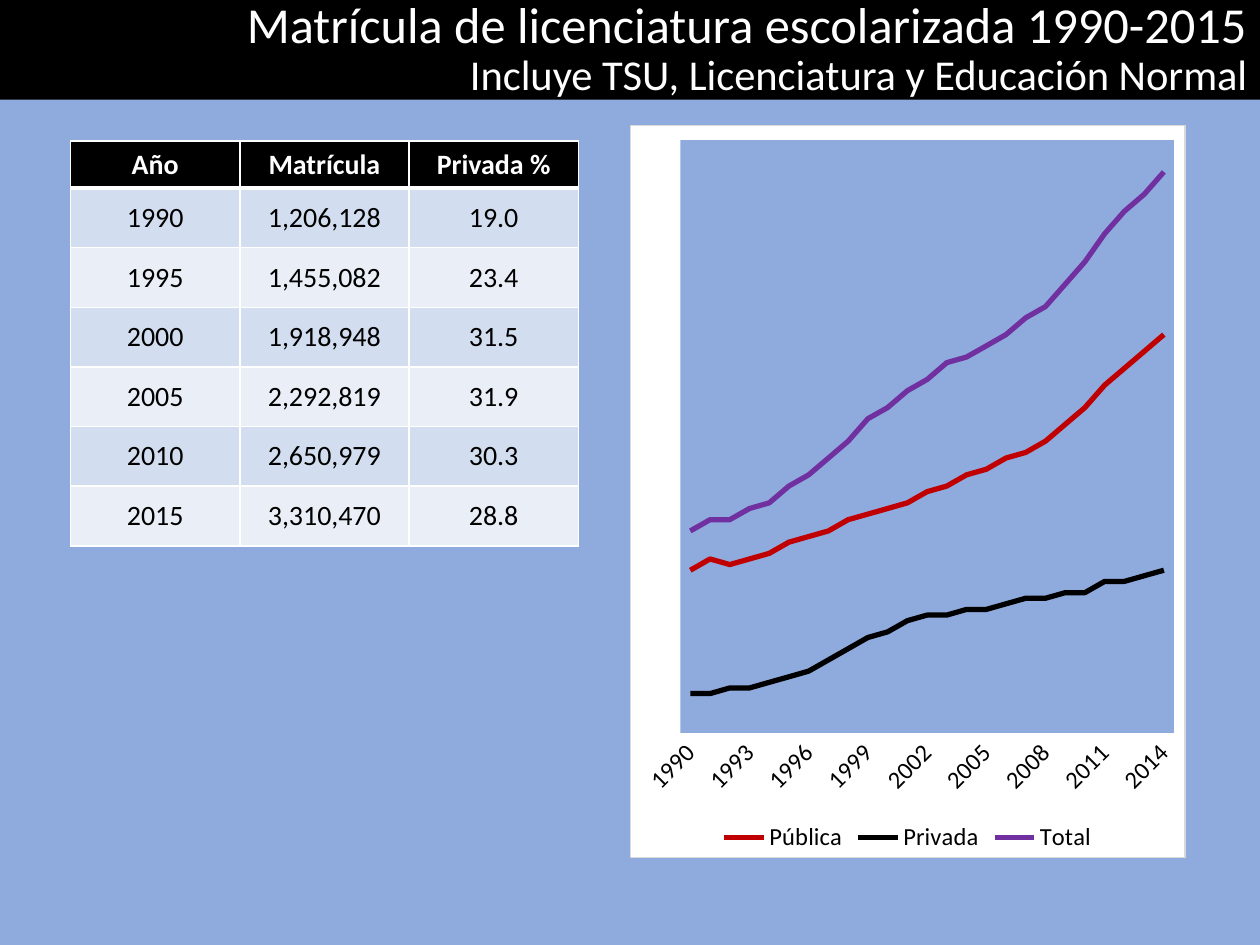
from lxml.etree import SubElement
from pptx import Presentation
from pptx.chart.data import CategoryChartData
from pptx.dml.color import RGBColor
from pptx.enum.chart import XL_CHART_TYPE, XL_LEGEND_POSITION, XL_TICK_MARK
from pptx.enum.shapes import MSO_SHAPE
from pptx.enum.text import MSO_ANCHOR, PP_ALIGN
from pptx.oxml import parse_xml
from pptx.oxml.ns import nsdecls, qn
from pptx.util import Inches, Pt

BLACK = RGBColor(0x00, 0x00, 0x00)
WHITE = RGBColor(0xFF, 0xFF, 0xFF)
BLUE = RGBColor(0x8F, 0xAA, 0xDC)
BANDS = [RGBColor(0xD2, 0xDE, 0xEF), RGBColor(0xEA, 0xEF, 0xF7)]
GREY = RGBColor(0xD9, 0xD9, 0xD9)
RED = RGBColor(0xC0, 0x00, 0x00)
PURPLE = RGBColor(0x70, 0x30, 0xA0)
FONT = "Calibri"

TITLE = [("Matrícula de licenciatura escolarizada 1990-2015", 28.8),
         ("Incluye TSU, Licenciatura y Educación Normal", 24.3)]
ROWS = [("Año", "Matrícula", "Privada %"),
        ("1990", "1,206,128", "19.0"),
        ("1995", "1,455,082", "23.4"),
        ("2000", "1,918,948", "31.5"),
        ("2005", "2,292,819", "31.9"),
        ("2010", "2,650,979", "30.3"),
        ("2015", "3,310,470", "28.8")]
SERIES = [
    ("Pública", RED, [29, 31, 30, 31, 32, 34, 35, 36, 38, 39, 40, 41, 43,
                      44, 46, 47, 49, 50, 52, 55, 58, 62, 65, 68, 71]),
    ("Privada", BLACK, [7, 7, 8, 8, 9, 10, 11, 13, 15, 17, 18, 20, 21,
                        21, 22, 22, 23, 24, 24, 25, 25, 27, 27, 28, 29]),
    ("Total", PURPLE, [36, 38, 38, 40, 41, 44, 46, 49, 52, 56, 58, 61, 63,
                       66, 67, 69, 71, 74, 76, 80, 84, 89, 93, 96, 100]),
]


def style(font, size, color, bold=False):
    for key, val in {"name": FONT, "size": Pt(size), "bold": bold}.items():
        setattr(font, key, val)
    font.color.rgb = color


def add_title(slide, box):
    bar = slide.shapes.add_shape(MSO_SHAPE.RECTANGLE, *box)
    bar.shadow.inherit = False
    bar.fill.solid()
    bar.fill.fore_color.rgb = BLACK
    bar.line.fill.background()
    frame = bar.text_frame
    frame.word_wrap = True
    frame.vertical_anchor = MSO_ANCHOR.MIDDLE
    frame.margin_top = frame.margin_bottom = 0
    para = frame.paragraphs[0]
    para.alignment = PP_ALIGN.RIGHT
    para.line_spacing = 0.9
    for i, (text, size) in enumerate(TITLE):
        if i:
            para.add_line_break()
        run = para.add_run()
        run.text = text
        style(run.font, size, WHITE)


def set_borders(cell, widths):
    """Draw white edges; widths are points for left, right, top, bottom."""
    props = cell._tc.get_or_add_tcPr()
    for i, (side, width) in enumerate(zip("LRTB", widths)):
        props.insert(i, parse_xml(
            f'<a:ln{side} {nsdecls("a")} w="{Pt(width)}"><a:solidFill>'
            f'<a:srgbClr val="{WHITE}"/></a:solidFill></a:ln{side}>'))


def add_grid(slide, box):
    left, top, width, height = box
    table = slide.shapes.add_table(len(ROWS), len(ROWS[0]), *box).table
    table.horz_banding = False
    head = Inches(0.37)
    for col in table.columns:
        col.width = width // len(ROWS[0])
    for r, texts in enumerate(ROWS):
        table.rows[r].height = head if r == 0 else (height - head) // (len(ROWS) - 1)
        for c, text in enumerate(texts):
            cell = table.cell(r, c)
            cell.fill.solid()
            cell.fill.fore_color.rgb = BANDS[(r - 1) % 2] if r else BLACK
            cell.vertical_anchor = MSO_ANCHOR.MIDDLE
            para = cell.text_frame.paragraphs[0]
            para.alignment = PP_ALIGN.CENTER
            run = para.add_run()
            run.text = text
            style(run.font, 16, BLACK if r else WHITE, bold=r == 0)
            set_borders(cell, (1, 1, 3 if r == 1 else 1, 3 if r == 0 else 1))


def area(fill, line=None):
    """Make the format of a chart region from its fill and edge colours."""
    edge = (f'<a:solidFill><a:srgbClr val="{line}"/></a:solidFill>'
            if line else "<a:noFill/>")
    return parse_xml(
        f'<c:spPr {nsdecls("c", "a")}><a:solidFill><a:srgbClr val="{fill}"/>'
        f'</a:solidFill><a:ln w="{Pt(0.75)}">{edge}</a:ln></c:spPr>')


def place_plot(plot, spots):
    """Fix the inner plot area; spots are shares of the chart's size."""
    old = plot.find(qn("c:layout"))
    if old is not None:
        plot.remove(old)
    layout = parse_xml(f'<c:layout {nsdecls("c")}><c:manualLayout/></c:layout>')
    tags = {"layoutTarget": "inner", "xMode": "edge", "yMode": "edge", **spots}
    for tag, val in tags.items():
        SubElement(layout[0], qn(f"c:{tag}")).set("val", str(val))
    plot.insert(0, layout)


def add_lines(slide, box):
    data = CategoryChartData(number_format="#,##0")
    data.categories = [str(year) for year in range(1990, 2015)]
    for name, _, vals in SERIES:
        data.add_series(name, vals)
    chart = slide.shapes.add_chart(XL_CHART_TYPE.LINE, *box, data).chart
    chart.has_title = False
    style(chart.font, 10, BLACK)
    chart.plots[0].vary_by_categories = False
    for line, (_, color, _) in zip(chart.plots[0].series, SERIES):
        line.smooth = False
        line.format.line.width = Pt(3)
        line.format.line.color.rgb = color

    years = chart.category_axis
    years.major_tick_mark = years.minor_tick_mark = XL_TICK_MARK.NONE
    years.format.line.fill.background()
    style(years.tick_labels.font, 14, BLACK)
    axis = years._element
    axis.find(qn("c:txPr")).find(qn("a:bodyPr")).set("rot", "-2700000")
    axis.find(qn("c:noMultiLvlLbl")).addprevious(
        parse_xml(f'<c:tickLblSkip {nsdecls("c")} val="3"/>'))

    scale = chart.value_axis
    for key, val in {"minimum_scale": 0, "maximum_scale": 105.7,
                     "has_major_gridlines": False, "visible": False}.items():
        setattr(scale, key, val)

    chart.has_legend = True
    chart.legend.position = XL_LEGEND_POSITION.BOTTOM
    chart.legend.include_in_layout = False
    style(chart.legend.font, 14, BLACK)

    body = chart._chartSpace.find(qn("c:chart"))
    plot = body.find(qn("c:plotArea"))
    place_plot(plot, {"x": 0.09, "y": 0.02, "w": 0.89, "h": 0.81})
    plot.append(area(BLUE))
    body.addnext(area(WHITE, GREY))


def main():
    deck = Presentation()
    deck.slide_width, deck.slide_height = Inches(10), Inches(7.5)
    slide = deck.slides.add_slide(deck.slide_layouts[6])
    slide.background.fill.solid()
    slide.background.fill.fore_color.rgb = BLUE
    parts = [(add_title, (0, 0, 10, 0.79)),
             (add_lines, (5, 0.99, 4.41, 5.82)),
             (add_grid, (0.56, 1.12, 4.03, 3.21))]
    for build, box in parts:
        build(slide, [Inches(n) for n in box])
    deck.save("out.pptx")


if __name__ == "__main__":
    main()
